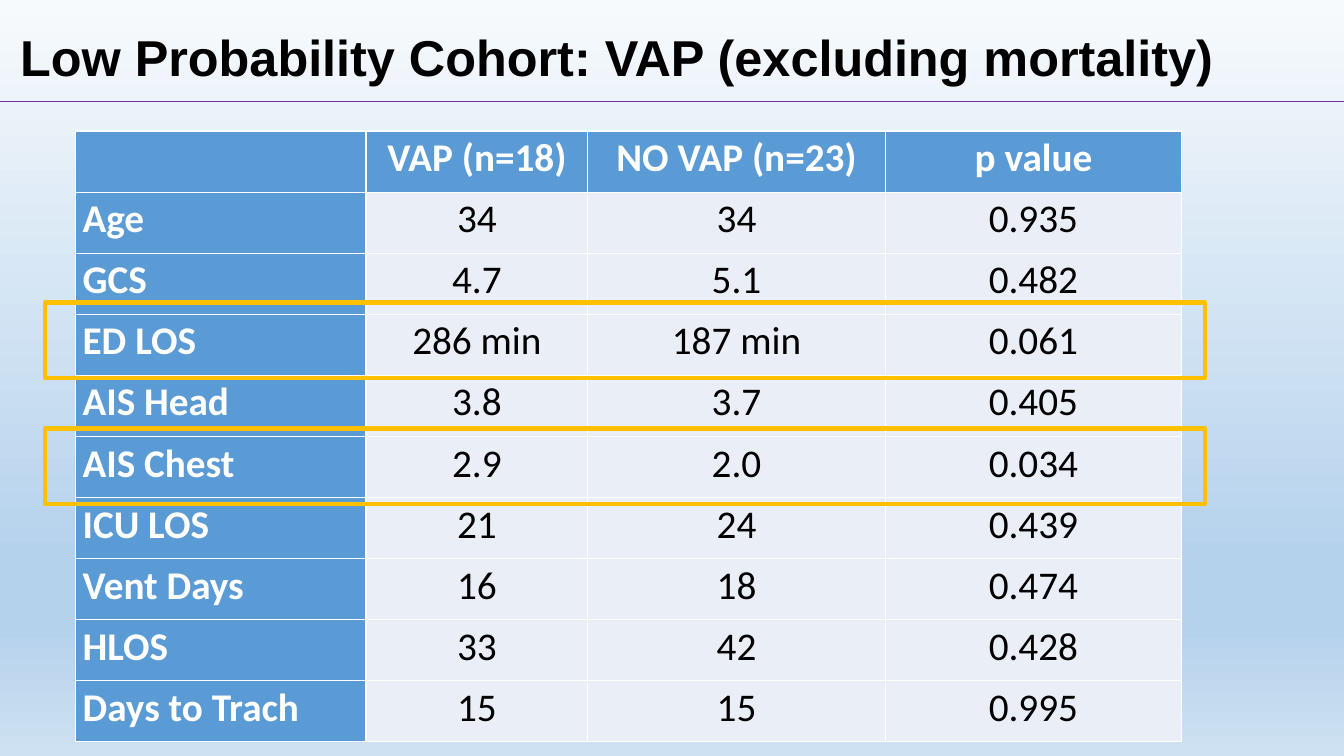
import pptx
import pptx.dml.color
import pptx.enum.shapes
import pptx.enum.text
import pptx.oxml
import pptx.oxml.ns
import pptx.util

EMU_PER_PX = 9144
COLORS = {
    "black": "000000",
    "white": "FFFFFF",
    "header": "5B9BD5",
    "body": "EAEFF7",
    "rule": "7030A0",
    "highlight": "FFC000",
}
BACKGROUND_STOPS = [(0, "F7FAFD"), (74, "B5D2EC"), (83, "B5D2EC"), (100, "CEE1F2")]
COLUMN_WIDTHS = [288, 220, 295, 294]
ROWS = [
    ["", "VAP (n=18)", "NO VAP (n=23)", "p value"],
    ["Age", "34", "34", "0.935"],
    ["GCS", "4.7", "5.1", "0.482"],
    ["ED LOS", "286 min", "187 min", "0.061"],
    ["AIS Head", "3.8", "3.7", "0.405"],
    ["AIS Chest", "2.9", "2.0", "0.034"],
    ["ICU LOS", "21", "24", "0.439"],
    ["Vent Days", "16", "18", "0.474"],
    ["HLOS", "33", "42", "0.428"],
    ["Days to Trach", "15", "15", "0.995"],
]


def px(length):
    return pptx.util.Emu(length * EMU_PER_PX)


def color(name):
    return pptx.dml.color.RGBColor.from_string(COLORS[name])


def format_paragraph(paragraph, font_name, size, color_name, bold, spacing, alignment):
    paragraph.line_spacing = spacing
    paragraph.alignment = alignment
    for run in paragraph.runs:
        run.font.name = font_name
        run.font.size = pptx.util.Pt(size)
        run.font.bold = bold
        run.font.color.rgb = color(color_name)


def set_background(slide):
    fill = slide.background.fill
    fill.gradient()
    fill.gradient_angle = 270
    stop_list = slide.element.find(".//" + pptx.oxml.ns.qn("a:gsLst"))
    for stop in list(stop_list):
        stop_list.remove(stop)
    for position, hex_color in BACKGROUND_STOPS:
        stop_list.append(pptx.oxml.parse_xml(
            f'<a:gs {pptx.oxml.ns.nsdecls("a")} pos="{position * 1000}">'
            f'<a:srgbClr val="{hex_color}"/></a:gs>'))


def set_title(slide, text):
    title = slide.shapes.title
    title.left, title.top, title.width, title.height = px(10), px(14), px(1313), px(92)
    title.text_frame.text = text
    title.text_frame.vertical_anchor = pptx.enum.text.MSO_ANCHOR.MIDDLE
    format_paragraph(title.text_frame.paragraphs[0], "Arial", 36, "black", True, 0.9,
                     pptx.enum.text.PP_ALIGN.LEFT)


def add_rule(slide, top, width):
    rule = slide.shapes.add_connector(
        pptx.enum.shapes.MSO_CONNECTOR.STRAIGHT, 0, px(top), px(width), px(top))
    rule.line.color.rgb = color("rule")
    rule.line.width = pptx.util.Pt(1)
    rule.element.spPr.append(
        pptx.oxml.parse_xml(f'<a:effectLst {pptx.oxml.ns.nsdecls("a")}/>'))


def fill_cell(cell, text, is_heading, alignment):
    cell.margin_left = cell.margin_right = px(7)
    cell.margin_top = cell.margin_bottom = 0
    cell.fill.solid()
    cell.fill.fore_color.rgb = color("header" if is_heading else "body")
    cell.text_frame.text = text
    format_paragraph(cell.text_frame.paragraphs[0], "Calibri", 28,
                     "white" if is_heading else "black", is_heading, 1.07, alignment)


def add_outcome_table(slide):
    table = slide.shapes.add_table(
        len(ROWS), len(COLUMN_WIDTHS),
        px(75), px(130), px(sum(COLUMN_WIDTHS)), px(606)).table
    table.first_col = True
    table.horz_banding = False
    for column, width in zip(table.columns, COLUMN_WIDTHS):
        column.width = px(width)
    for row_index, row in enumerate(ROWS):
        for column_index, text in enumerate(row):
            alignment = (pptx.enum.text.PP_ALIGN.CENTER if column_index
                         else pptx.enum.text.PP_ALIGN.LEFT)
            fill_cell(table.cell(row_index, column_index), text,
                      row_index == 0 or column_index == 0, alignment)


def add_highlight(slide, top):
    shape = slide.shapes.add_shape(
        pptx.enum.shapes.MSO_SHAPE.FLOWCHART_PROCESS, px(45), px(top), px(1150), px(75))
    shape.shadow.inherit = False
    shape.fill.background()
    shape.line.color.rgb = color("highlight")
    shape.line.width = pptx.util.Pt(3)


def main():
    presentation = pptx.Presentation()
    presentation.slide_width = px(1333)
    presentation.slide_height = px(750)
    slide = presentation.slides.add_slide(presentation.slide_layouts[5])
    set_background(slide)
    set_title(slide, "Low Probability Cohort: VAP (excluding mortality)")
    add_rule(slide, 101, 1333)
    add_outcome_table(slide)
    for top in (425, 300):
        add_highlight(slide, top)
    presentation.save("out.pptx")


if __name__ == "__main__":
    main()
